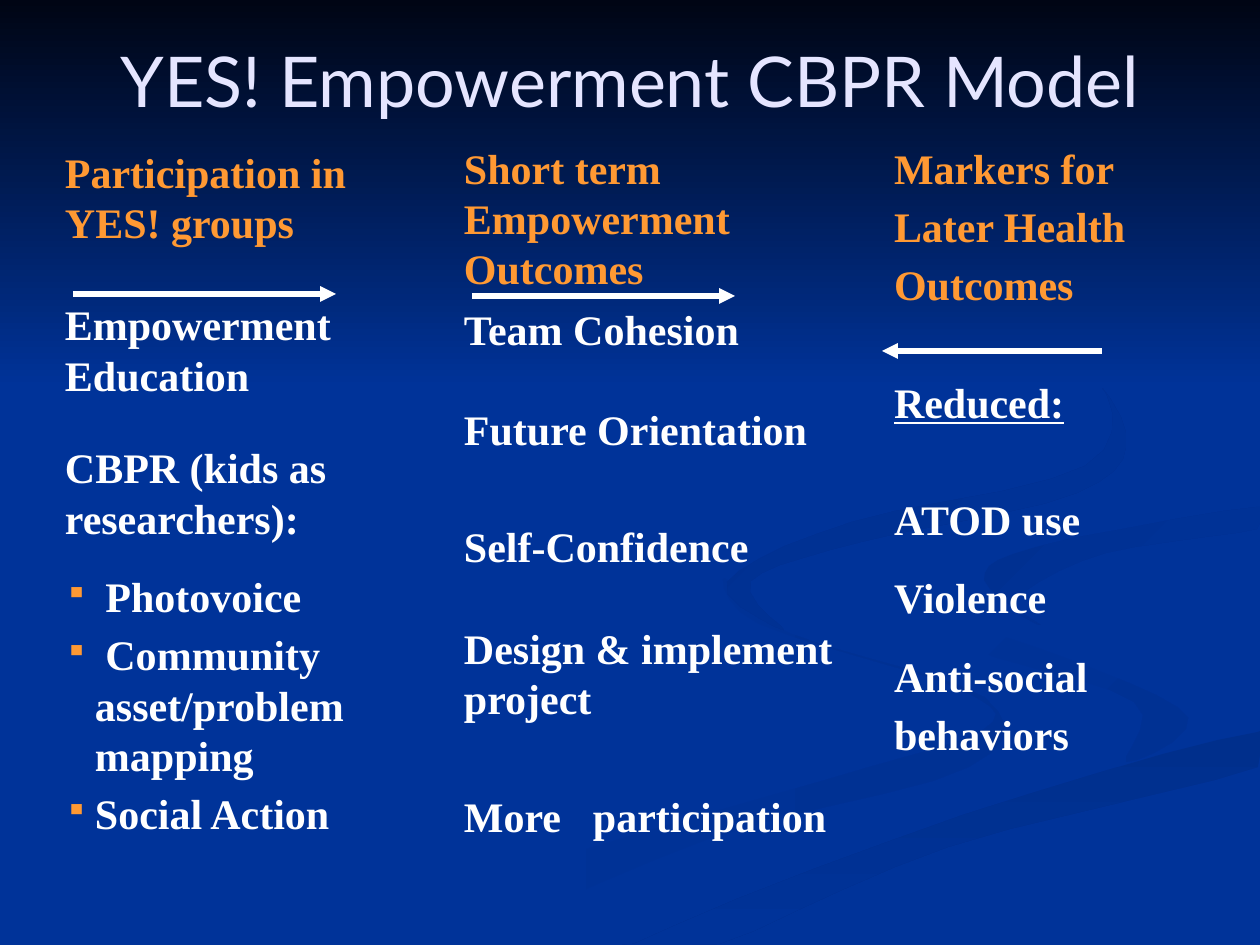
from lxml import etree
from pptx import Presentation
from pptx import util as u
from pptx.dml.color import RGBColor
from pptx.enum import shapes, text
from pptx.oxml.ns import qn

SCALE = 914400 / 126
WIDE, HIGH = 1260, 945
BLUE, WHITE, GOLD, LILAC = "003399", "FFFFFF", "FF9933", "E5E5FF"
SERIF = "Times New Roman"
STEPS = 5

SWIRLS = [
    (BLUE, "003193", 0, [
        (984, 697), (789, 633), (725, 578), (759, 624), (960, 689), (983, 730),
        (822, 781), (525, 869), (378, 944), (455, 944), (711, 838), (969, 767)]),
    (BLUE, "003193", 45, [
        (1188, 718), (1071, 660), (924, 609), (912, 585), (965, 645), (1134, 702),
        (1126, 762)]),
    ("002F8C", BLUE, 90, [
        (634, 944), (719, 944), (948, 847), (1258, 767), (1258, 732), (963, 815)]),
    ("003091", BLUE, 45, [
        (984, 580), (1041, 625), (1014, 600), (1106, 553), (1257, 529), (1257, 507),
        (1036, 547)]),
    ("002F8E", BLUE, 45, [
        (861, 542), (1077, 493), (1126, 433), (1062, 346), (960, 294), (1096, 377),
        (1085, 466), (852, 522), (727, 582), (784, 630), (751, 581)]),
]

TITLE = "YES! Empowerment CBPR Model"
COLUMNS = [
    ((65, 146, 300, 700), [
        ("Participation in YES! groups", 0, "head"),
        ("Empowerment Education", 52, ""),
        ("CBPR (kids as researchers):", 42, ""),
        (" Photovoice", 28, "bullet"),
        (" Community asset/problem mapping", 8, "bullet"),
        ("Social Action", 8, "bullet")]),
    ((464, 142, 406, 710), [
        ("Short term Empowerment Outcomes", 0, "head"),
        ("Team Cohesion", 10, ""),
        ("Future Orientation", 50, ""),
        ("Self-Confidence", 67, ""),
        ("Design & implement project", 51, ""),
        ("More\tparticipation", 67, "tab")]),
    ((894, 142, 322, 700), [
        ("Markers for", 0, "head"),
        ("Later Health", 8, "head"),
        ("Outcomes", 8, "head"),
        ("Reduced:", 67, "under"),
        ("ATOD use", 67, ""),
        ("Violence", 28, ""),
        ("Anti-social", 28, ""),
        ("behaviors", 8, "")]),
]
ARROWS = [(73, 336, 294), (472, 735, 296), (1102, 882, 351)]


def px(n):
    return u.Emu(round(n * SCALE))


def rgb(code):
    return RGBColor.from_string(code)


def add(node, tag, **attrs):
    return etree.SubElement(node, qn(tag), attrs)


def blend(a, b, c, d, t):
    return b + t / 2 * (c - a + t * (2 * a - 5 * b + 4 * c - d + t * (3 * (b - c) + d - a)))


def curve(knots):
    count = len(knots)
    for i in range(count):
        near = [knots[(i + k) % count] for k in (-1, 0, 1, 2)]
        for step in range(STEPS):
            x, y = (blend(*axis, step / STEPS) for axis in zip(*near))
            yield min(x, WIDE), min(y, HIGH)


def shade(shape, start, end, angle):
    shape.shadow.inherit = False
    shape.line.fill.background()
    shape.fill.gradient()
    shape.fill.gradient_angle = (360 - angle) % 360
    for stop, code in zip(shape.fill.gradient_stops, (start, end)):
        stop.color.rgb = rgb(code)


def add_swirl(slide, start, end, angle, knots):
    points = list(curve(knots))
    pen = slide.shapes.build_freeform(*points[0], scale=SCALE)
    pen.add_line_segments(points[1:], close=True)
    shade(pen.convert_to_shape(), start, end, angle)


def add_box(slide, place):
    frame = slide.shapes.add_textbox(*map(px, place)).text_frame
    frame.word_wrap = True
    frame.margin_left = frame.margin_right = 0
    frame.margin_top = frame.margin_bottom = 0
    return frame


def style(para, size, face, code, bold=False):
    for run in para.runs:
        font = run.font
        font.size, font.name, font.bold = u.Pt(size), face, bold
        font.color.rgb = rgb(code)


def add_column(slide, place, items):
    frame = add_box(slide, place)
    frame.text = "\n".join(item[0] for item in items)
    for para, (_, gap, kind) in zip(frame.paragraphs, items):
        para.line_spacing = u.Pt(28.8)
        if gap:
            para.space_before = px(gap)
        props = para._p.get_or_add_pPr()
        if kind == "bullet":
            props.set("marL", str(px(30)))
            props.set("indent", str(-px(30)))
            add(add(props, "a:buClr"), "a:srgbClr", val=GOLD)
            add(props, "a:buSzPct", val="75000")
            add(props, "a:buChar", char="▪")
        if kind == "tab":
            add(add(props, "a:tabLst"), "a:tab", pos=str(px(129)), algn="l")
        style(para, 24, SERIF, GOLD if kind == "head" else WHITE, True)
        if kind == "under":
            para.runs[0].font.underline = True


def add_arrow(slide, start, end, y):
    line = slide.shapes.add_connector(
        shapes.MSO_CONNECTOR.STRAIGHT, px(start), px(y), px(end), px(y))
    line.line.color.rgb = rgb(WHITE)
    line.line.width = u.Pt(3)
    props = line._element.spPr
    add(props.find(qn("a:ln")), "a:tailEnd", type="triangle")
    add(props, "a:effectLst")


def main():
    deck = Presentation()
    deck.slide_width, deck.slide_height = px(WIDE), px(HIGH)
    slide = deck.slides.add_slide(deck.slide_layouts[6])
    slide.background.fill.solid()
    slide.background.fill.fore_color.rgb = rgb(BLUE)
    for swirl in SWIRLS:
        add_swirl(slide, *swirl)
    band = slide.shapes.add_shape(
        shapes.MSO_SHAPE.RECTANGLE, 0, 0, px(WIDE), px(388))
    shade(band, "000514", BLUE, 90)
    for place, items in COLUMNS:
        add_column(slide, place, items)
    frame = add_box(slide, (63, 0, 1134, 158))
    frame.vertical_anchor = text.MSO_ANCHOR.MIDDLE
    frame.text = TITLE
    frame.paragraphs[0].alignment = text.PP_ALIGN.CENTER
    style(frame.paragraphs[0], 40, "Lato", LILAC)
    for arrow in ARROWS:
        add_arrow(slide, *arrow)
    deck.save("out.pptx")


if __name__ == "__main__":
    main()
